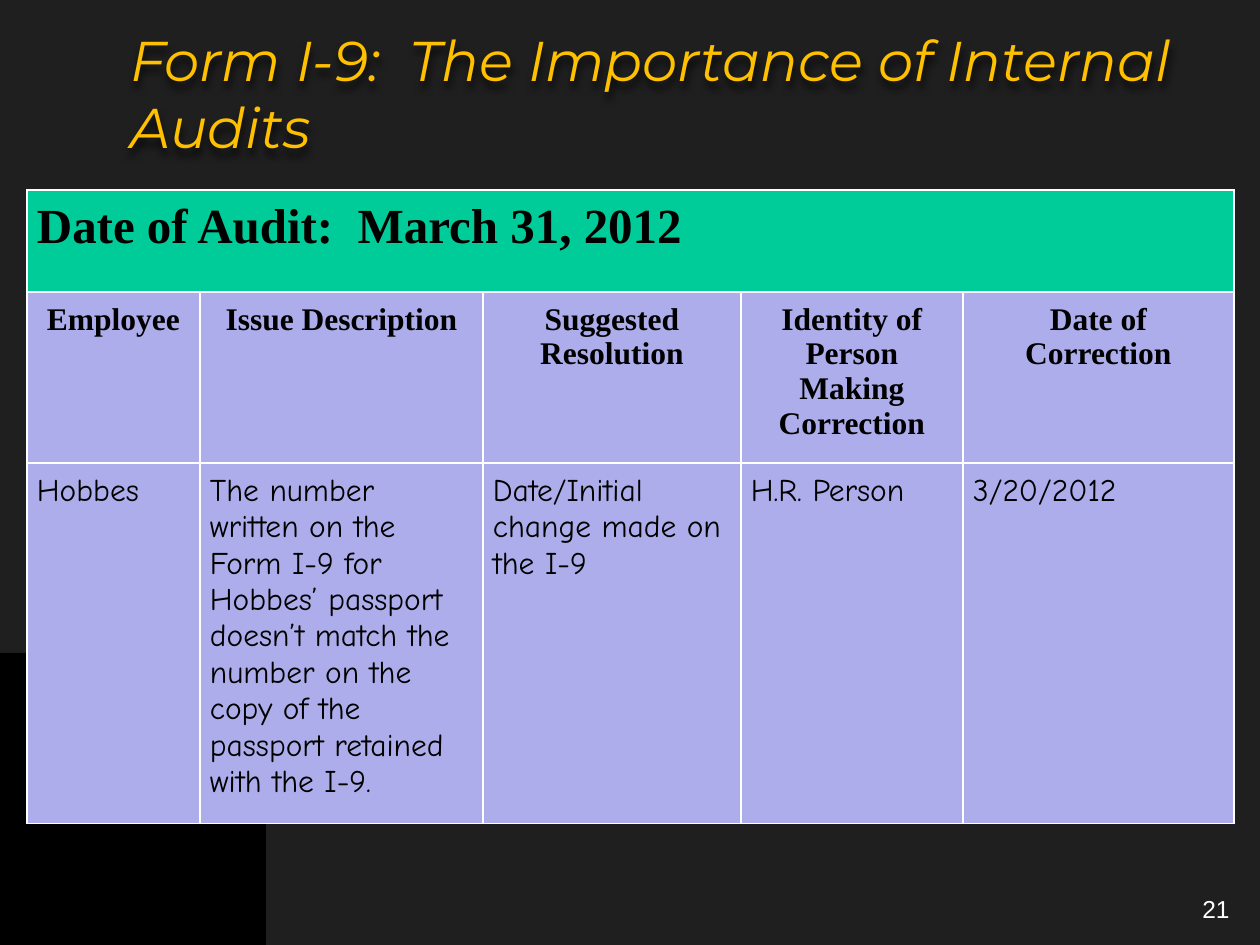
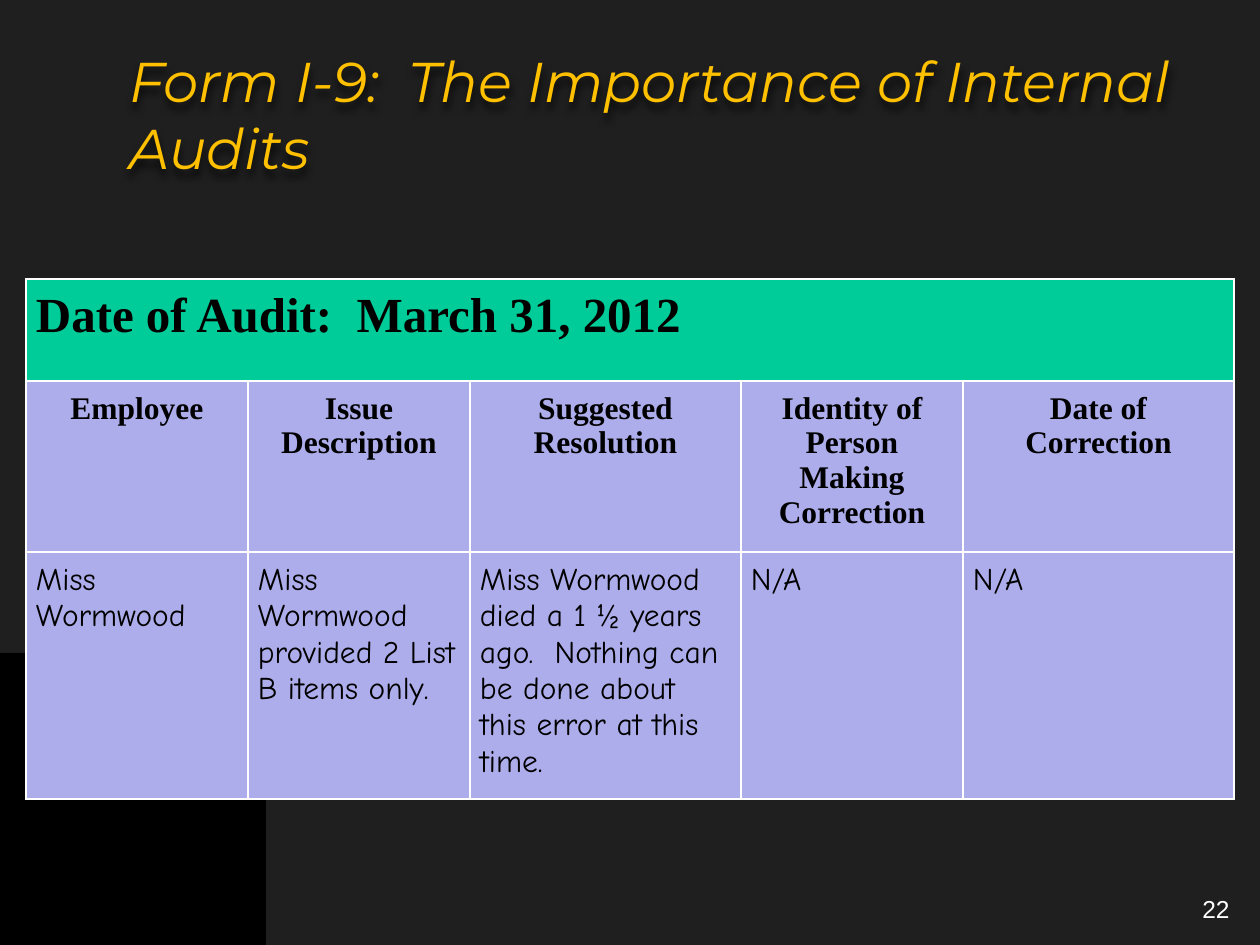
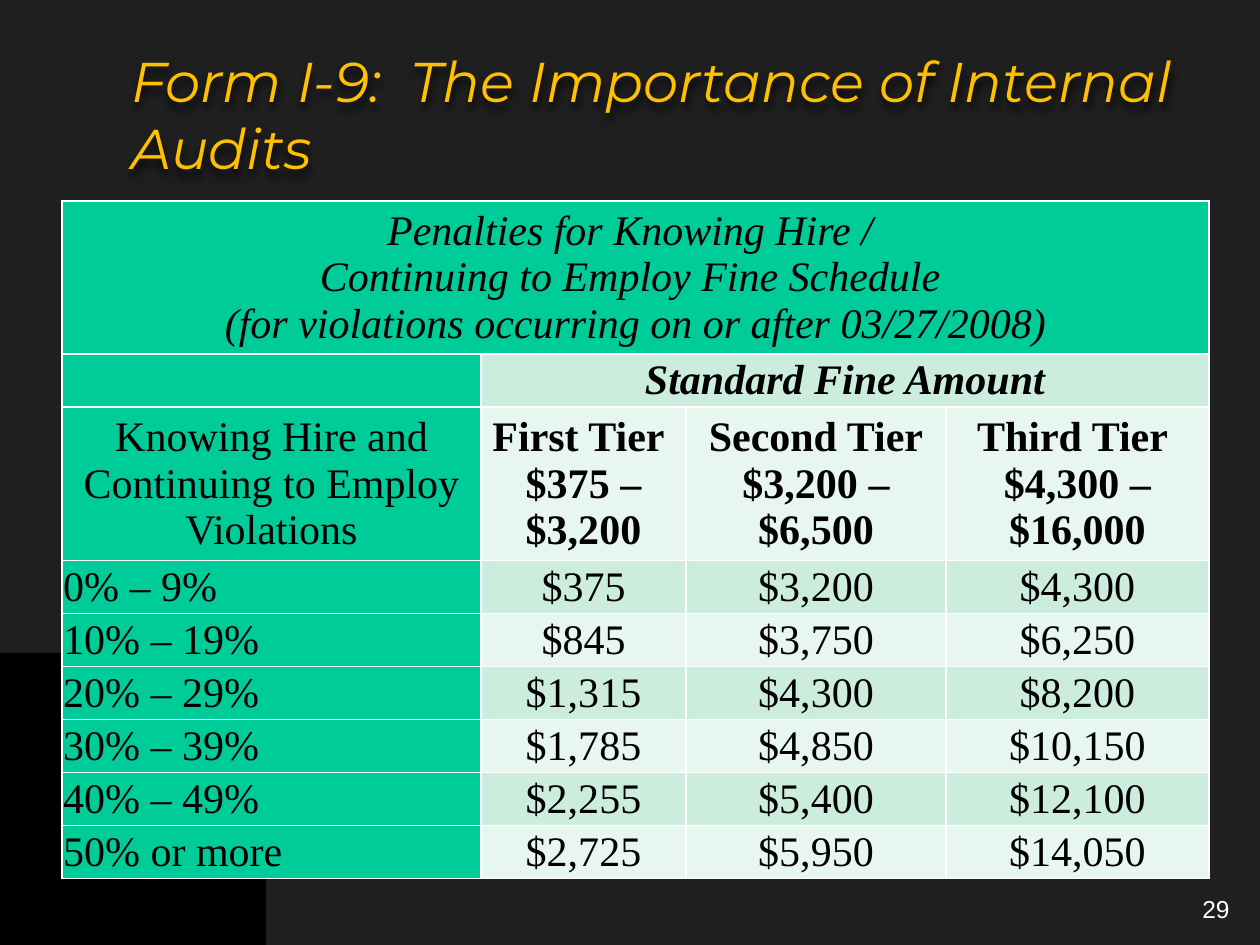
from lxml import etree
from pptx import Presentation
from pptx.dml.color import RGBColor
from pptx.enum.shapes import MSO_SHAPE
from pptx.enum.text import MSO_ANCHOR, PP_ALIGN
from pptx.oxml import parse_xml
from pptx.oxml.ns import nsdecls, qn
from pptx.util import Pt

SCALE = 914400 / 126
WIDE, HIGH = 1260, 945

RECT = MSO_SHAPE.RECTANGLE
TOP, MIDDLE = MSO_ANCHOR.TOP, MSO_ANCHOR.MIDDLE
LEFT, CENTER, RIGHT = PP_ALIGN.LEFT, PP_ALIGN.CENTER, PP_ALIGN.RIGHT

BLACK = RGBColor(0x00, 0x00, 0x00)
WHITE = RGBColor(0xFF, 0xFF, 0xFF)
GRAY = RGBColor(0x80, 0x80, 0x80)
GOLD = RGBColor(0xFF, 0xC0, 0x00)
GREEN = RGBColor(0x00, 0xCC, 0x99)
LILAC = RGBColor(0xAD, 0xAD, 0xEB)
MINT = RGBColor(0xCC, 0xEC, 0xDE)
PALE = RGBColor(0xE7, 0xF6, 0xEF)

SERIF = "Times New Roman"
TITLE = {"size": Pt(32), "name": "Montserrat", "italic": True}
NUMBER = {"size": Pt(14), "name": "Arial"}
DATE = {"size": Pt(28), "name": SERIF, "bold": True}
HEAD = {"size": Pt(18), "name": SERIF, "bold": True}
BODY = {"size": Pt(18), "name": "Comic Neue"}
FINE = {"size": Pt(24), "name": SERIF}
FINE_BOLD = {**FINE, "bold": True}
FINE_TOP = {**FINE, "italic": True}
FINE_SUB = {**FINE_BOLD, "italic": True}

HEADING = "Form I-9:  The Importance of Internal Audits"
AUDIT = "Date of Audit:  March 31, 2012"
LABELS = ["Employee", "Issue Description", "Suggested Resolution",
          "Identity of Person Making Correction", "Date of Correction"]
HOBBES = ["Hobbes",
          "The number written on the Form I-9 for Hobbes’ passport doesn’t match "
          "the number on the copy of the passport retained with the I-9.",
          "Date/Initial change made on the I-9", "H.R. Person", "3/20/2012"]
WORMWOOD = ["Miss Wormwood", "Miss Wormwood provided 2 List B items only.",
            "Miss Wormwood died a 1 ½ years ago.  Nothing can be done about "
            "this error at this time.", "N/A", "N/A"]
FINES = [
    ["Penalties for Knowing Hire / \nContinuing to Employ Fine Schedule \v"
     "(for violations occurring on or after 03/27/2008)", "", "", ""],
    ["", "Standard Fine Amount", "", ""],
    ["Knowing Hire and Continuing to Employ Violations",
     "First Tier \v$375 – $3,200", "Second Tier\v$3,200 – $6,500",
     "Third Tier \v$4,300 – $16,000"],
    ["0% – 9%", "$375", "$3,200", "$4,300"],
    ["10% – 19%", "$845", "$3,750", "$6,250"],
    ["20% – 29%", "$1,315", "$4,300", "$8,200"],
    ["30% – 39%", "$1,785", "$4,850", "$10,150"],
    ["40% – 49%", "$2,255", "$5,400", "$12,100"],
    ["50% or more", "$2,725", "$5,950", "$14,050"],
]


def px(*nums):
    return [round(num * SCALE) for num in nums]


def write(frame, text, fmt, color, align=LEFT):
    frame.text = text
    for para in frame.paragraphs:
        para.alignment = align
        para.line_spacing = 1.0
        for run in para.runs:
            for key, value in fmt.items():
                setattr(run.font, key, value)
            run.font.color.rgb = color


def add_box(slide, place, text, fmt, color, align=LEFT, anchor=TOP):
    box = slide.shapes.add_textbox(*px(*place))
    frame = box.text_frame
    frame.word_wrap = True
    frame.vertical_anchor = anchor
    write(frame, text, fmt, color, align)
    return box


def add_panel(slide, place, alpha=100):
    panel = slide.shapes.add_shape(RECT, *px(*place))
    panel.shadow.inherit = False
    panel.line.fill.background()
    panel.fill.solid()
    panel.fill.fore_color.rgb = BLACK
    if alpha < 100:
        tone = panel.fill._xPr.find(f".//{qn('a:srgbClr')}")
        etree.SubElement(tone, qn("a:alpha")).set("val", str(alpha * 1000))


def add_title(slide, left, top):
    box = add_box(slide, (left, top, 1134, 147), HEADING, TITLE, GOLD,
                  anchor=MIDDLE)
    box._element.spPr.append(parse_xml(
        f'<a:effectLst {nsdecls("a")}>'
        '<a:outerShdw blurRad="50800" dist="50800" dir="5400000">'
        '<a:srgbClr val="000000"><a:alpha val="75000"/></a:srgbClr>'
        '</a:outerShdw></a:effectLst>'))


def add_page(deck, number, left, top):
    slide = deck.slides.add_slide(deck.slide_layouts[6])
    back = slide.background.fill
    back.solid()
    back.fore_color.rgb = GRAY
    for _ in range(2):
        add_panel(slide, (0, 0, WIDE, HIGH), 50)
    add_panel(slide, (0, 653, 266, 292))
    add_title(slide, left, top)
    add_box(slide, (1032, 888, 210, 63), str(number), NUMBER, WHITE, RIGHT)
    return slide


def edge_cell(cell):
    props = cell._tc.get_or_add_tcPr()
    for spot, side in enumerate("LRTB"):
        props.insert(spot, parse_xml(
            f'<a:ln{side} {nsdecls("a")} w="12700"><a:solidFill>'
            f'<a:srgbClr val="{WHITE}"/></a:solidFill></a:ln{side}>'))


def add_grid(slide, place, cols, rows, data, style, spans, pad, anchor):
    left, top, high = place
    spot = px(left, top, sum(cols), high)
    holder = slide.shapes.add_table(len(rows), len(cols), *spot)
    grid = holder.table
    grid.first_row = grid.horz_banding = False
    for col, size in zip(grid.columns, px(*cols)):
        col.width = size
    for row, size in zip(grid.rows, px(*rows)):
        row.height = size
    holder.height = spot[3]
    for r, line in enumerate(data):
        for c, text in enumerate(line):
            cell = grid.cell(r, c)
            fill, fmt, align = style(r, c)
            cell.fill.solid()
            cell.fill.fore_color.rgb = fill
            edge_cell(cell)
            cell.vertical_anchor = anchor
            for side in ("left", "right", "top", "bottom"):
                setattr(cell, f"margin_{side}", px(pad)[0])
            if text:
                write(cell.text_frame, text, fmt, BLACK, align)
    for r, start in spans:
        grid.cell(r, start).merge(grid.cell(r, len(cols) - 1))


def audit_style(r, c):
    return [(GREEN, DATE, LEFT), (LILAC, HEAD, CENTER), (LILAC, BODY, LEFT)][r]


def fine_style(r, c):
    fill = GREEN if r == 0 or c == 0 else MINT if r % 2 else PALE
    if r == 0:
        fmt = FINE_TOP
    elif r == 1:
        fmt = FINE_SUB
    else:
        fmt = FINE_BOLD if r == 2 and c else FINE
    return fill, fmt, LEFT if r > 2 and c == 0 else CENTER


def add_audit(slide, place, cols, depth, case):
    data = [[AUDIT] + [""] * 4, LABELS, case]
    add_grid(slide, place, cols, [102, 98, depth], data, audit_style,
             [(0, 0)], 10, TOP)


def main():
    deck = Presentation()
    deck.slide_width, deck.slide_height = px(WIDE, HIGH)

    page = add_page(deck, 21, 118, 19)
    add_audit(page, (27, 190, 709), [173, 283, 258, 222, 271], 229, HOBBES)

    page = add_page(deck, 22, 117, 40)
    add_audit(page, (26, 279, 634), [222, 222, 271, 222, 271], 152, WORMWOOD)

    page = add_page(deck, 29, 119, 40)
    add_grid(page, (62, 201, 688), [419, 205, 260, 263],
             [151, 53, 151] + [53] * 6, FINES, fine_style,
             [(0, 0), (1, 1)], 1, MIDDLE)

    deck.save("out.pptx")


if __name__ == "__main__":
    main()
